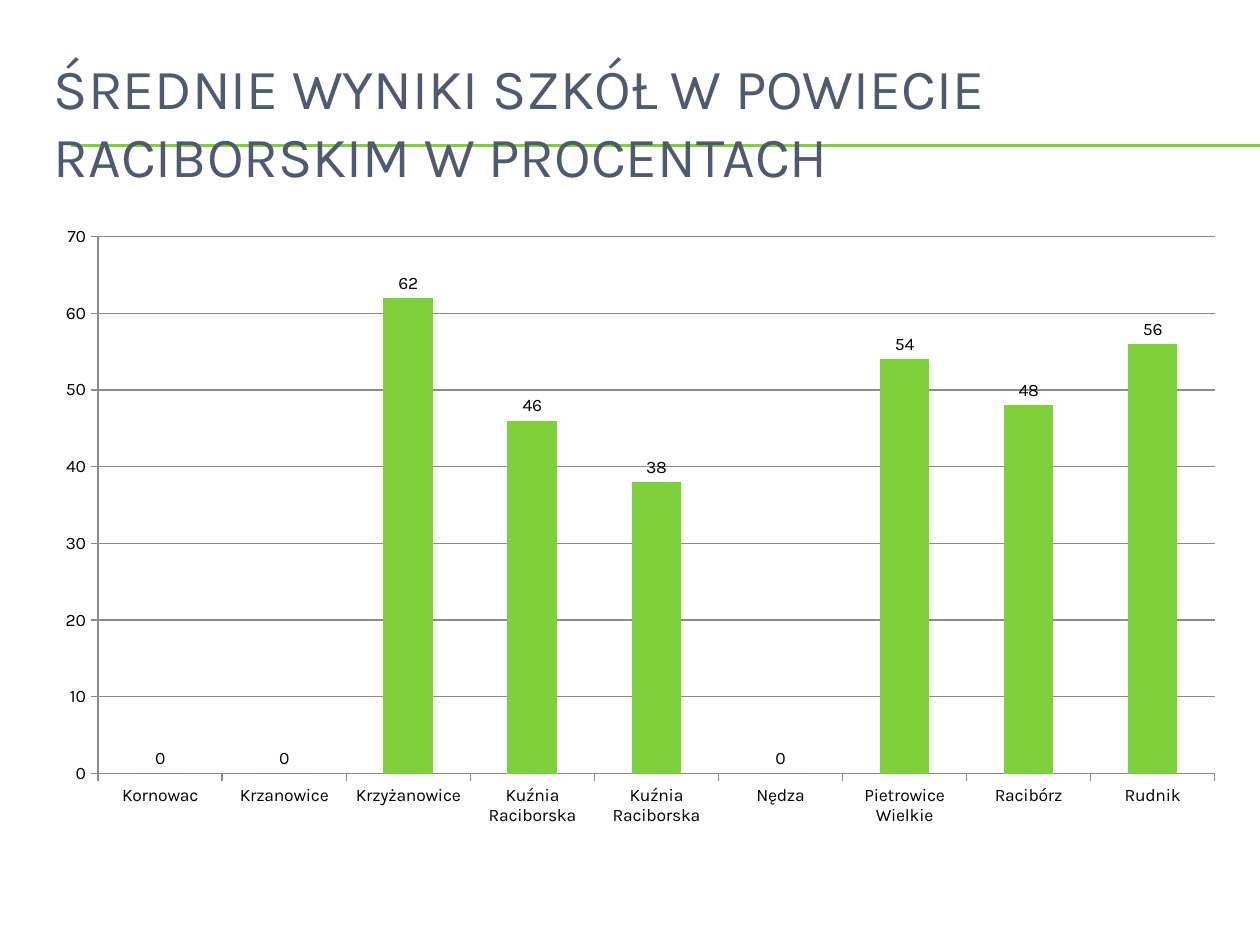
from dataclasses import dataclass

from lxml import etree
from pptx import Presentation
from pptx.chart.data import CategoryChartData
from pptx.dml.color import RGBColor
from pptx.enum.chart import XL_CHART_TYPE, XL_LABEL_POSITION, XL_TICK_MARK
from pptx.enum.shapes import MSO_CONNECTOR
from pptx.enum.text import MSO_ANCHOR
from pptx.oxml.ns import qn
from pptx.util import Inches, Pt

COLUMNS = XL_CHART_TYPE.COLUMN_CLUSTERED
OUTSIDE_END = XL_LABEL_POSITION.OUTSIDE_END
TICK_OUTSIDE = XL_TICK_MARK.OUTSIDE
STRAIGHT = MSO_CONNECTOR.STRAIGHT
MIDDLE = MSO_ANCHOR.MIDDLE


@dataclass(frozen=True)
class Theme:
    font: str = "Karla"
    title: RGBColor = RGBColor(0x4E, 0x5B, 0x6F)
    accent: RGBColor = RGBColor(0x7F, 0xD1, 0x3B)
    text: RGBColor = RGBColor(0, 0, 0)
    grid: RGBColor = RGBColor(0x8B, 0x8B, 0x8B)
    title_size: Pt = Pt(32.4)
    chart_size: Pt = Pt(10)
    line_width: Pt = Pt(0.75)


THEME = Theme()
LEFT, WIDTH = Inches(0.33), Inches(9.5)
TITLE = "ŚREDNIE WYNIKI SZKÓŁ W POWIECIE RACIBORSKIM W PROCENTACH"
SCHOOL_RESULTS = [
    ("Kornowac", 0),
    ("Krzanowice", 0),
    ("Krzyżanowice", 62),
    ("Kuźnia Raciborska", 46),
    ("Kuźnia Raciborska", 38),
    ("Nędza", 0),
    ("Pietrowice Wielkie", 54),
    ("Racibórz", 48),
    ("Rudnik", 56),
]


def style_font(font, size, color):
    font.name = THEME.font
    font.size = size
    font.color.rgb = color


def style_line(line, color):
    line.color.rgb = color
    line.width = THEME.line_width


def add_rule(s, y):
    """Draw a horizontal accent line that runs off to the right edge."""
    line = s.shapes.add_connector(
        STRAIGHT, Inches(0.56), Inches(y), Inches(10), Inches(y))
    style_line(line.line, THEME.accent)
    etree.SubElement(line._element.spPr, qn("a:effectLst"))


def add_title(s):
    tf = s.shapes.add_textbox(LEFT, Inches(0.5), WIDTH, Inches(0.92)).text_frame
    tf.word_wrap = True
    tf.vertical_anchor = MIDDLE
    r = tf.paragraphs[0].add_run()
    r.text = TITLE
    style_font(r.font, THEME.title_size, THEME.title)


def add_results_chart(s):
    data = CategoryChartData()
    data.categories = [name for name, _ in SCHOOL_RESULTS]
    data.add_series("Series 1", [value for _, value in SCHOOL_RESULTS])
    chart = s.shapes.add_chart(
        COLUMNS, LEFT, Inches(1.7), WIDTH, Inches(4.95), data).chart
    chart.has_title = False
    chart.has_legend = False
    style_font(chart.font, THEME.chart_size, THEME.text)

    for axis in (chart.category_axis, chart.value_axis):
        axis.major_tick_mark = TICK_OUTSIDE
        style_line(axis.format.line, THEME.grid)
    value_axis = chart.value_axis
    value_axis.minimum_scale, value_axis.maximum_scale = 0, 70
    value_axis.major_unit = 10
    value_axis.has_major_gridlines = True
    style_line(value_axis.major_gridlines.format.line, THEME.grid)

    plot = chart.plots[0]
    plot.gap_width = 150
    plot.vary_by_categories = False
    series = plot.series[0]
    series.format.fill.solid()
    series.format.fill.fore_color.rgb = THEME.accent
    labels = series.data_labels
    labels.show_value = True
    labels.position = OUTSIDE_END
    style_font(labels.font, THEME.chart_size, THEME.text)


def main():
    prs = Presentation()
    prs.slide_width, prs.slide_height = Inches(10), Inches(7.5)
    s = prs.slides.add_slide(prs.slide_layouts[6])
    for y in (1.15, 1.16):
        add_rule(s, y)
    add_title(s)
    add_results_chart(s)
    prs.save("out.pptx")


if __name__ == "__main__":
    main()
